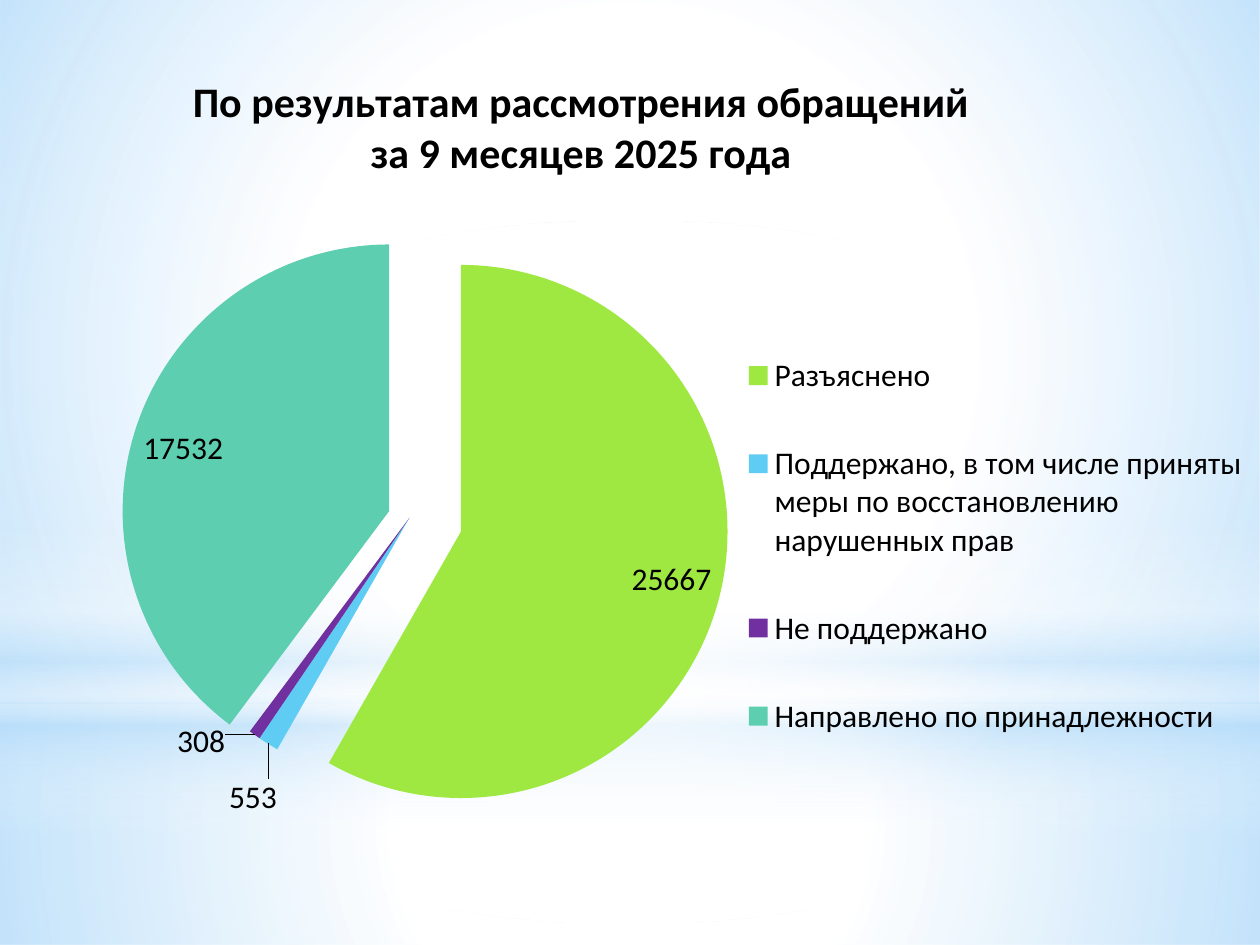
from dataclasses import dataclass

from lxml.etree import _Element
from pptx import Presentation
from pptx.chart.chart import Chart
from pptx.chart.data import CategoryChartData
from pptx.dml.color import RGBColor
from pptx.enum.chart import XL_CHART_TYPE, XL_LABEL_POSITION, XL_LEGEND_POSITION
from pptx.enum.shapes import MSO_SHAPE
from pptx.enum.text import PP_ALIGN
from pptx.oxml import parse_xml
from pptx.oxml.ns import nsdecls, qn
from pptx.slide import Slide
from pptx.util import Inches, Pt

BLACK = RGBColor(0x00, 0x00, 0x00)
WHITE = RGBColor(0xFF, 0xFF, 0xFF)
SKY = RGBColor(0xB4, 0xDC, 0xFA)
LIME = RGBColor(0x9F, 0xE8, 0x42)
BLUE = RGBColor(0x5E, 0xCC, 0xF3)
PURPLE = RGBColor(0x70, 0x30, 0xA0)
TEAL = RGBColor(0x5D, 0xCE, 0xAF)

WIDTH, HEIGHT = Inches(10), Inches(7.5)
CHART_FONT, TEXT_FONT = "Roboto", "Calibri"
TITLE_LINES = ("По результатам рассмотрения обращений", "за 9 месяцев 2025 года")
RADIAL = ('<a:path path="circle"><a:fillToRect l="50000" t="50000" '
          'r="50000" b="50000"/></a:path>')
DOWNWARD = '<a:lin ang="5400000" scaled="0"/>'


@dataclass(frozen=True)
class Glow:
    """A full-width backdrop; top and height are shares of the slide."""
    shape: MSO_SHAPE
    top: float
    height: float
    direction: str
    stops: tuple[tuple[int, RGBColor, int], ...]  # position, colour, opacity


@dataclass(frozen=True)
class Outcome:
    """A pie slice; the label shift is a share of the chart's size."""
    name: str
    count: int
    color: RGBColor
    explosion: int
    position: XL_LABEL_POSITION
    shift: tuple[float, float] | None = None


GLOWS = (
    Glow(MSO_SHAPE.RECTANGLE, 0.744, 0.256, RADIAL,
         ((0, WHITE, 91), (37, WHITE, 76), (100, SKY, 79))),
    Glow(MSO_SHAPE.RECTANGLE, 0, 0.744, RADIAL,
         ((0, WHITE, 89), (48, WHITE, 62), (100, SKY, 79))),
    Glow(MSO_SHAPE.RECTANGLE, 0.55, 0.333, DOWNWARD,
         ((0, WHITE, 0), (29, WHITE, 30), (45, SKY, 40),
          (55, WHITE, 26), (65, SKY, 60), (100, WHITE, 0))),
    Glow(MSO_SHAPE.OVAL, 0.233, 0.744, RADIAL,
         ((0, WHITE, 100), (56, WHITE, 0))),
)
INSIDE, OUTSIDE = XL_LABEL_POSITION.INSIDE_END, XL_LABEL_POSITION.OUTSIDE_END
OUTCOMES = (
    Outcome("Разъяснено", 25667, LIME, 20, INSIDE),
    Outcome("Поддержано, в том числе приняты меры по восстановлению нарушенных прав",
            553, BLUE, 0, OUTSIDE, (0.01, 0.03)),
    Outcome("Не поддержано", 308, PURPLE, 0, OUTSIDE, (-0.02, -0.02)),
    Outcome("Направлено по принадлежности", 17532, TEAL, 8, INSIDE),
)


def add_glow(slide: Slide, glow: Glow) -> None:
    shape = slide.shapes.add_shape(glow.shape, 0, int(HEIGHT * glow.top),
                                   WIDTH, int(HEIGHT * glow.height))
    shape.shadow.inherit = False
    shape.line.fill.background()
    stops = "".join(
        f'<a:gs pos="{position * 1000}"><a:srgbClr val="{color}">'
        f'<a:alpha val="{opacity * 1000}"/></a:srgbClr></a:gs>'
        for position, color, opacity in glow.stops)
    gradient = parse_xml(f'<a:gradFill {nsdecls("a")} rotWithShape="1">'
                         f'<a:gsLst>{stops}</a:gsLst>{glow.direction}</a:gradFill>')
    shape.element.spPr.find(qn("a:prstGeom")).addnext(gradient)


def place(after: _Element, **values: float | str) -> None:
    """Put a manual layout after the given chart element."""
    old = after.getparent().find(qn("c:layout"))
    if old is not None:
        old.getparent().remove(old)
    entries = "".join(f'<c:{key} val="{value}"/>' for key, value in values.items())
    after.addnext(parse_xml(f'<c:layout {nsdecls("c")}><c:manualLayout>{entries}'
                            f'</c:manualLayout></c:layout>'))


def explosion(percent: int) -> _Element:
    return parse_xml(f'<c:explosion {nsdecls("c")} val="{percent}"/>')


def write_title(chart: Chart) -> None:
    title = chart.chart_title
    frame = title.text_frame
    for number, line in enumerate(TITLE_LINES):
        para = frame.add_paragraph() if number else frame.paragraphs[0]
        para.alignment = PP_ALIGN.CENTER
        span = para.add_run()
        span.text = line
        span.font.name = TEXT_FONT
        span.font.size = Pt(24)
        span.font.bold = True
        span.font.color.rgb = BLACK
    title.include_in_layout = True
    place(title._element.find(qn("c:tx")), xMode="edge", yMode="edge", x=0.15, y=0.07)


def format_slices(chart: Chart) -> None:
    series = chart.plots[0].series[0]
    series.data_labels.show_value = True
    series.data_labels.font.name = TEXT_FONT
    for number, outcome in enumerate(OUTCOMES):
        point = series.points[number]
        point.format.fill.solid()
        point.format.fill.fore_color.rgb = outcome.color
        label = point.data_label
        label.font.name = TEXT_FONT
        label.font.size = Pt(18)
        label.font.color.rgb = BLACK
        label.position = outcome.position
    # Explosions and label shifts
    element = series._element
    slices = element.findall(qn("c:dPt"))
    labels = element.find(qn("c:dLbls")).findall(qn("c:dLbl"))
    for outcome, piece, label in zip(OUTCOMES, slices, labels):
        piece.find(qn("c:spPr")).addprevious(explosion(outcome.explosion))
        if outcome.shift:
            place(label.find(qn("c:idx")), x=outcome.shift[0], y=outcome.shift[1])
    slices[0].addprevious(explosion(25))


def add_pie(slide: Slide) -> None:
    data = CategoryChartData()
    data.categories = [outcome.name for outcome in OUTCOMES]
    data.add_series("Series 1", [outcome.count for outcome in OUTCOMES])
    top = Inches(0.05)
    chart = slide.shapes.add_chart(XL_CHART_TYPE.PIE, 0, top, WIDTH,
                                   HEIGHT - top, data).chart
    chart.font.name = CHART_FONT
    chart.font.size = Pt(18)
    chart.font.color.rgb = BLACK
    chart.plots[0].vary_by_categories = True
    write_title(chart)
    format_slices(chart)

    # Legend on the right
    chart.has_legend = True
    legend = chart.legend
    legend.position = XL_LEGEND_POSITION.RIGHT
    legend.include_in_layout = False
    legend.font.name = TEXT_FONT
    legend.font.size = Pt(18)
    legend.font.color.rgb = BLACK
    place(legend._element.find(qn("c:legendPos")), xMode="edge", yMode="edge",
          x=0.58, y=0.32, w=0.42, h=0.51)

    # Plot area; the marker holds the first place for the layout
    plot_area = chart._chartSpace.chart.plotArea
    place(plot_area[0] if plot_area[0].tag != qn("c:layout") else plot_area[1],
          layoutTarget="inner", xMode="edge", yMode="edge",
          x=0.06, y=0.19, w=0.53, h=0.71)
    plot_area.insert(0, plot_area.find(qn("c:layout")))


def main() -> None:
    deck = Presentation()
    deck.slide_width, deck.slide_height = WIDTH, HEIGHT
    page = deck.slides.add_slide(deck.slide_layouts[6])
    page.background.fill.solid()
    page.background.fill.fore_color.rgb = WHITE
    for glow in GLOWS:
        add_glow(page, glow)
    add_pie(page)
    deck.save("out.pptx")


if __name__ == "__main__":
    main()
